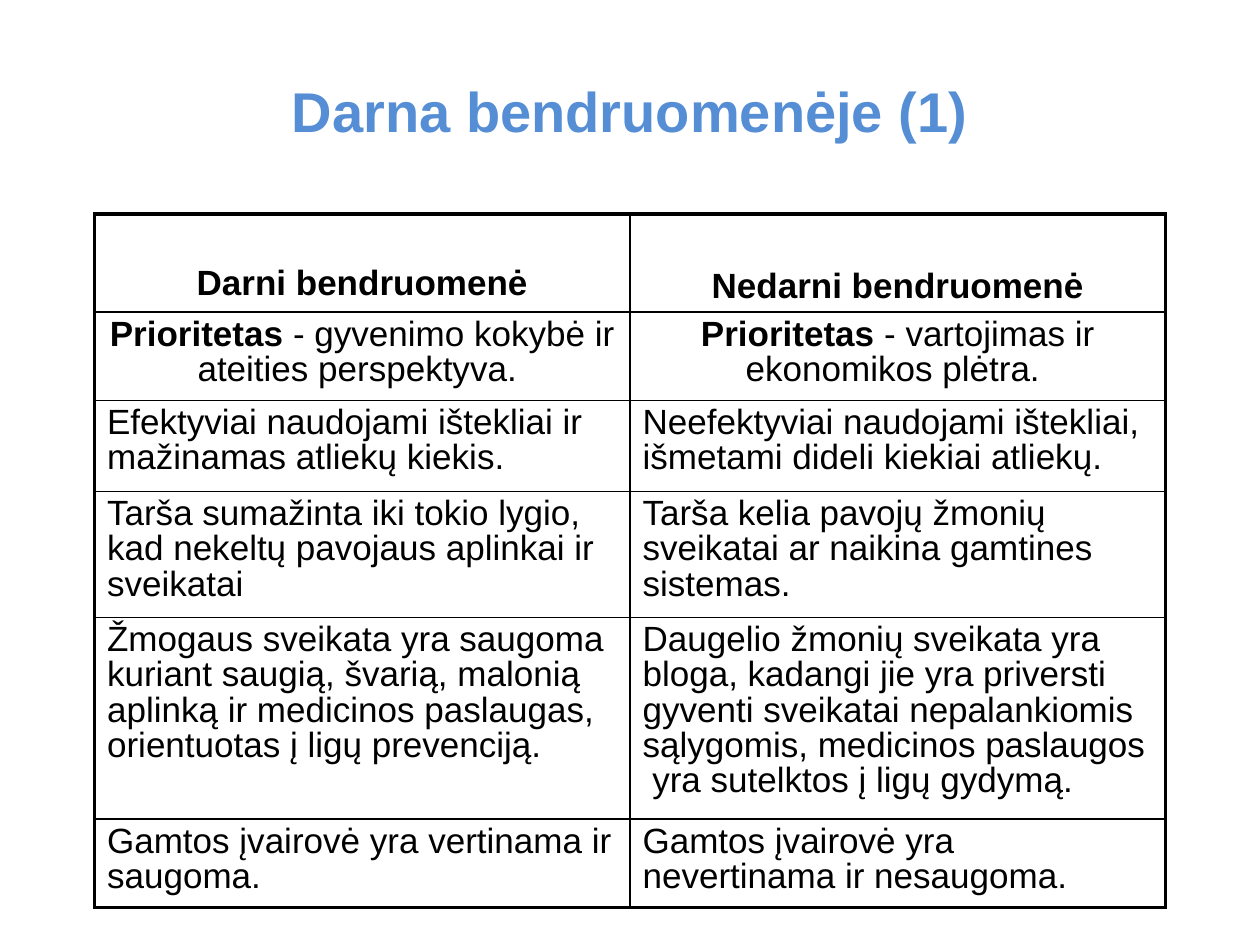
from pptx import Presentation
from pptx.dml.color import RGBColor
from pptx.enum.text import MSO_ANCHOR as Anchor, PP_ALIGN as Align
from pptx.oxml.ns import qn
from pptx.util import Pt
from lxml.etree import SubElement


def write(frame, text, size=20, color="000000", bold=False, align=Align.LEFT, spacing=0.9, lead=""):
    paragraph = frame.paragraphs[0]
    paragraph.alignment = align
    paragraph.line_spacing = spacing
    for part, heavy in ((lead, True), (text, bold)):
        if part:
            run = paragraph.add_run()
            run.text = part
            run.font.name = "Arial"
            run.font.size = Pt(size)
            run.font.bold = heavy
            run.font.color.rgb = RGBColor.from_string(color)


def border(cell, side, width):
    line = SubElement(cell._tc.get_or_add_tcPr(), qn(f"a:ln{side}"), w=str(Pt(width)))
    SubElement(SubElement(line, qn("a:solidFill")), qn("a:srgbClr"), val="000000")


headings = ["Darni bendruomenė", "Nedarni bendruomenė"]
priorities = [
    ("Prioritetas ", "- gyvenimo kokybė ir ateities perspektyva. "),
    ("Prioritetas", " - vartojimas ir ekonomikos plėtra. "),
]
comparisons = [
    ("Efektyviai naudojami ištekliai ir mažinamas atliekų kiekis.",
     "Neefektyviai naudojami ištekliai, išmetami dideli kiekiai atliekų."),
    ("Tarša sumažinta iki tokio lygio, kad nekeltų pavojaus aplinkai ir sveikatai",
     "Tarša kelia pavojų žmonių sveikatai ar naikina gamtines sistemas."),
    ("Žmogaus sveikata yra saugoma kuriant saugią, švarią, malonią aplinką ir medicinos "
     "paslaugas, orientuotas į ligų prevenciją.",
     "Daugelio žmonių sveikata yra bloga, kadangi jie yra priversti gyventi sveikatai "
     "nepalankiomis sąlygomis, medicinos paslaugos  yra sutelktos į ligų gydymą."),
    ("Gamtos įvairovė yra vertinama ir saugoma.",
     "Gamtos įvairovė yra nevertinama ir nesaugoma."),
]
heights = [56, 47, 52, 67, 111, 48]

deck = Presentation()
deck.slide_width, deck.slide_height = Pt(720), Pt(540)
slide = deck.slides.add_slide(deck.slide_layouts[6])

title = slide.shapes.add_textbox(Pt(54), Pt(26), Pt(612), Pt(73.5)).text_frame
title.word_wrap = True
title.vertical_anchor = Anchor.MIDDLE
write(title, "Darna bendruomenėje (1)", size=32, color="558ED5", bold=True,
      align=Align.CENTER, spacing=1.0)

communities = slide.shapes.add_table(
    len(heights), 2, Pt(54), Pt(122.4), Pt(612), Pt(sum(heights))).table
communities.first_row = False
communities.horz_banding = False
for row, height in zip(communities.rows, heights):
    row.height = Pt(height)

last = len(heights) - 1
for r in range(len(heights)):
    for c in range(2):
        cell = communities.cell(r, c)
        cell.margin_left = cell.margin_right = Pt(7.2)
        cell.margin_top = cell.margin_bottom = Pt(3.6)
        outer = {"L": c == 0, "R": c == 1, "T": r == 0, "B": r == last}
        for side, edge in outer.items():
            border(cell, side, 2.25 if edge else 1)
        cell.fill.background()
        if r == 0:
            cell.vertical_anchor = Anchor.BOTTOM
            write(cell.text_frame, headings[c], bold=True, align=Align.CENTER)
        elif r == 1:
            lead, text = priorities[c]
            write(cell.text_frame, text, lead=lead, align=Align.CENTER)
        else:
            write(cell.text_frame, comparisons[r - 2][c])

communities.cell(0, 0).margin_bottom = Pt(5.3)

deck.save("out.pptx")
